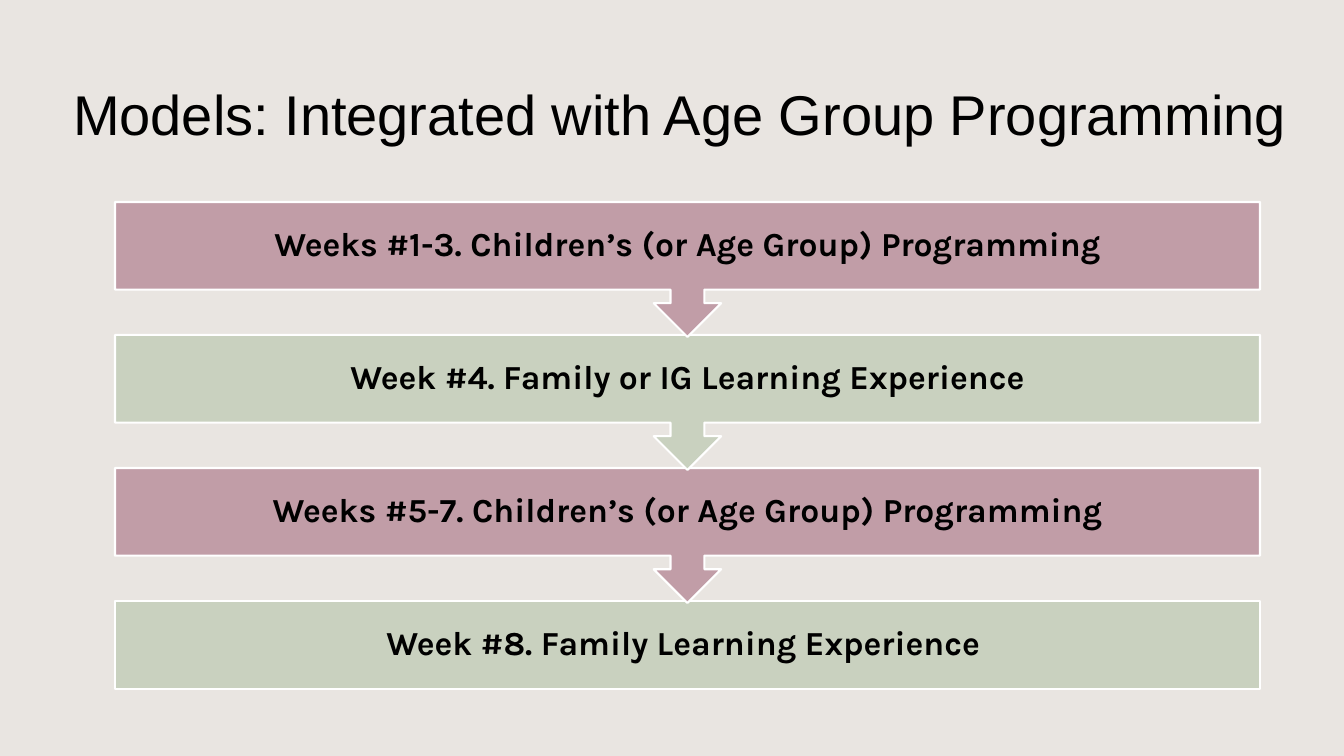
import pptx
import pptx.dml.color
import pptx.enum.shapes
import pptx.enum.text
import pptx.util

COLORS = {
    "background": "E9E5E1",
    "rose": "C19DA7",
    "sage": "C9D1BF",
    "outline": "FFFFFF",
    "text": "000000",
}
EMU_PER_PX = 914400 / 100.8
TITLE_FORMAT = {"name": "Arial", "size": pptx.util.Pt(40), "bold": False}
STEP_FORMAT = {"name": "Karla", "size": pptx.util.Pt(24), "bold": True}

STEPS = [
    ("Weeks #1-3. Children’s (or Age Group) Programming", "rose"),
    ("Week #4. Family or IG Learning Experience", "sage"),
    ("Weeks #5-7. Children’s (or Age Group) Programming", "rose"),
    ("Week #8. Family Learning Experience ", "sage"),
]
STEP_LEFT, STEP_TOP, STEP_WIDTH = 115, 202, 1145
STEP_PITCH, BOX_HEIGHT, CALLOUT_HEIGHT = 133, 88, 135
STEP_INSET = 19


def px(length):
    return pptx.util.Emu(round(length * EMU_PER_PX))


def rgb(name):
    return pptx.dml.color.RGBColor.from_string(COLORS[name])


class SlideBuilder:
    def __init__(self, presentation):
        self.slide = presentation.slides.add_slide(presentation.slide_layouts[5])
        fill = self.slide.background.fill
        fill.solid()
        fill.fore_color.rgb = rgb("background")

    def set_text(self, shape, text, font_format, inset=None):
        frame = shape.text_frame
        frame.text = text
        frame.word_wrap = True
        frame.vertical_anchor = pptx.enum.text.MSO_ANCHOR.MIDDLE
        if inset is not None:
            for side in ("left", "top", "right", "bottom"):
                setattr(frame, f"margin_{side}", px(inset))
        paragraph = frame.paragraphs[0]
        paragraph.alignment = pptx.enum.text.PP_ALIGN.CENTER
        font = paragraph.runs[0].font
        for attribute, value in font_format.items():
            setattr(font, attribute, value)
        font.color.rgb = rgb("text")
        return paragraph

    def title(self, text, left, top, width, height):
        shape = self.slide.shapes.title
        bounds = {"left": left, "top": top, "width": width, "height": height}
        for attribute, value in bounds.items():
            setattr(shape, attribute, px(value))
        self.set_text(shape, text, TITLE_FORMAT)

    def step(self, kind, text, color, left, top, width, height):
        shape = self.slide.shapes.add_shape(
            kind, px(left), px(top), px(width), px(height))
        shape.shadow.inherit = False
        shape.fill.solid()
        shape.fill.fore_color.rgb = rgb(color)
        shape.line.color.rgb = rgb("outline")
        shape.line.width = pptx.util.Pt(1.5)
        paragraph = self.set_text(shape, text, STEP_FORMAT, STEP_INSET)
        paragraph.line_spacing = 0.9


def main():
    presentation = pptx.Presentation()
    presentation.slide_width = px(1344)
    presentation.slide_height = px(756)
    builder = SlideBuilder(presentation)
    builder.title("Models: Integrated with Age Group Programming", 51, 40, 1257, 146)

    shapes = pptx.enum.shapes.MSO_SHAPE
    last = len(STEPS) - 1
    for index, (text, color) in reversed(list(enumerate(STEPS))):
        kind, height = shapes.DOWN_ARROW_CALLOUT, CALLOUT_HEIGHT
        if index == last:
            kind, height = shapes.RECTANGLE, BOX_HEIGHT
        top = STEP_TOP + index * STEP_PITCH
        builder.step(kind, text, color, STEP_LEFT, top, STEP_WIDTH, height)

    presentation.save("out.pptx")


if __name__ == "__main__":
    main()
